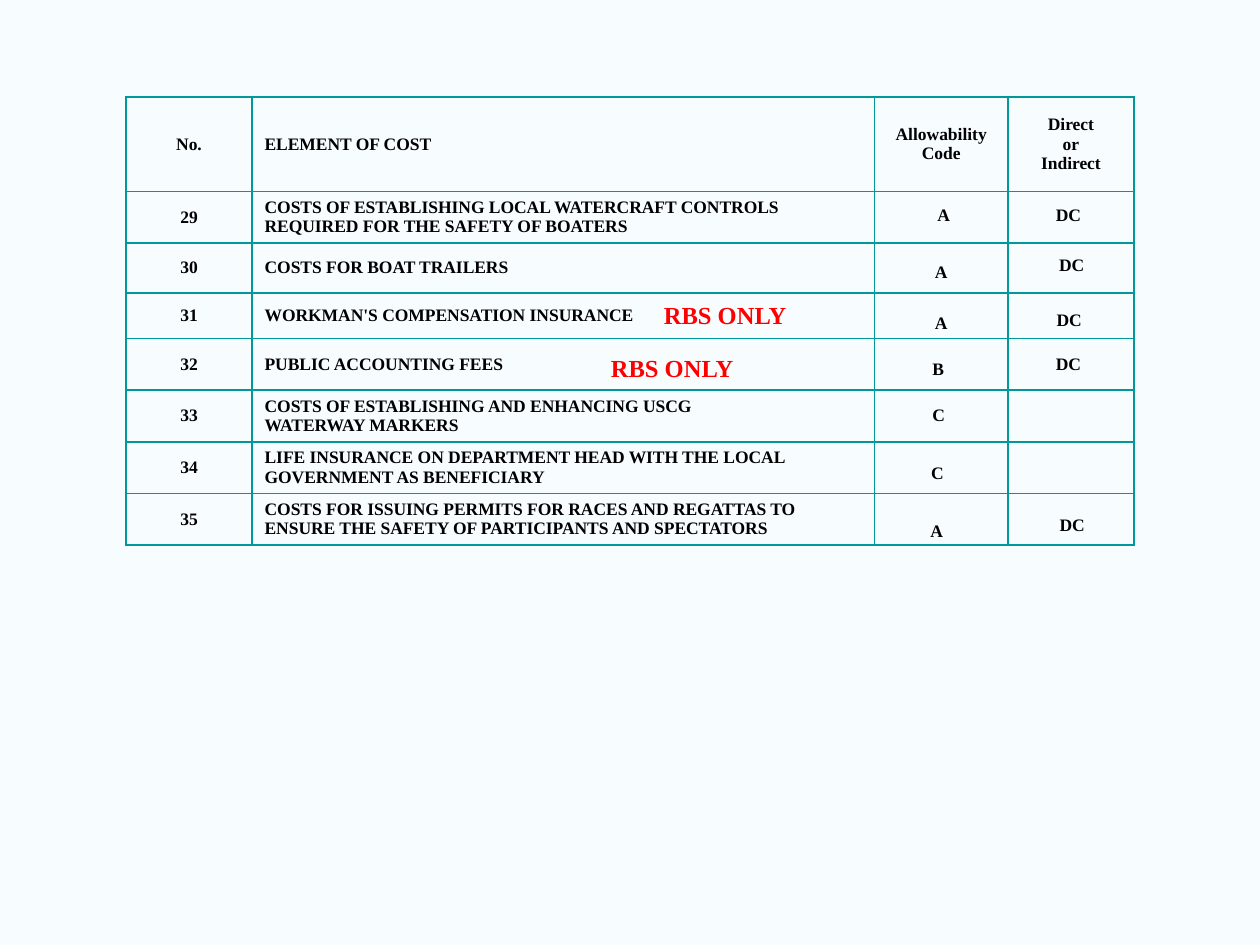
from typing import NamedTuple

from lxml.etree import SubElement
from pptx import Presentation
from pptx.dml.color import RGBColor
from pptx.enum.text import MSO_ANCHOR as ANCHOR, MSO_AUTO_SIZE as AUTO, PP_ALIGN as ALIGN
from pptx.oxml.ns import qn
from pptx.util import Inches, Pt

FONT = "Times New Roman"
TEAL, BLACK, RED, PALE = "009999", "010000", "FF0000", "F7FCFF"


class Label(NamedTuple):
    text: str
    left: float
    top: float
    width: float
    height: float = 0.27
    size: float = 10
    color: str = BLACK
    align: ALIGN = ALIGN.CENTER


COLUMNS = [1, 4.94, 1.06, 1]
HEIGHTS = [0.75, 0.4, 0.4, 0.36, 0.41, 0.41, 0.41, 0.41]
ROWS = [
    ("No.", "ELEMENT OF COST", "Allowability\nCode", "Direct\nor\nIndirect"),
    ("29", "COSTS OF ESTABLISHING LOCAL WATERCRAFT CONTROLS\nREQUIRED FOR THE SAFETY OF BOATERS"),
    ("30", "COSTS FOR BOAT TRAILERS"),
    ("31", "WORKMAN'S COMPENSATION INSURANCE"),
    ("32", "PUBLIC ACCOUNTING FEES"),
    ("33", "COSTS OF ESTABLISHING AND ENHANCING USCG\nWATERWAY MARKERS"),
    ("34", "LIFE INSURANCE ON DEPARTMENT HEAD WITH THE LOCAL\nGOVERNMENT AS BENEFICIARY"),
    ("35", "COSTS FOR ISSUING PERMITS FOR RACES AND REGATTAS TO\n"
           "ENSURE THE SAFETY OF PARTICIPANTS AND SPECTATORS"),
]
LABELS = [
    Label("A", 7.03, 1.57, 0.92),
    Label("DC", 8.03, 1.57, 0.9),
    Label("A", 7.02, 2.02, 0.9),
    Label("DC", 8.13, 1.97, 0.75),
    Label("A", 7, 2.43, 0.94),
    Label("DC", 8.05, 2.4, 0.87),
    Label("B", 7, 2.79, 0.89),
    Label("DC", 8.06, 2.75, 0.84),
    Label("C", 7.01, 3.16, 0.88),
    Label("C", 6.99, 3.62, 0.9),
    Label("A", 7.02, 4.08, 0.83),
    Label("DC", 8.08, 4.03, 0.86),
    Label("RBS ONLY", 5.17, 2.33, 1.42, 0.33, 14, RED, ALIGN.LEFT),
    Label("RBS ONLY", 4.75, 2.75, 1.42, 0.33, 14, RED, ALIGN.LEFT),
]


def rgb(value: str) -> RGBColor:
    return RGBColor.from_string(value)


def write(tf, text: str, *, size: float = 10, color: str = "000000",
          align: ALIGN = ALIGN.LEFT, hang: float = 0) -> None:
    for i, line in enumerate(text.split("\n")):
        p = tf.add_paragraph() if i else tf.paragraphs[0]
        p.alignment = align
        if hang:
            pPr = p._p.get_or_add_pPr()
            pPr.set("marL", str(Inches(hang)))
            pPr.set("indent", str(-Inches(hang)))
        if not line:
            SubElement(p._p, qn("a:endParaRPr")).set("sz", str(size * 100))
            continue
        r = p.add_run()
        r.text = line
        r.font.name, r.font.size, r.font.bold = FONT, Pt(size), True
        r.font.color.rgb = rgb(color)


def draw_borders(cell, color: str, width: float) -> None:
    tcPr = cell._tc.get_or_add_tcPr()
    for i, side in enumerate(("lnL", "lnR", "lnT", "lnB")):
        ln = tcPr.makeelement(qn(f"a:{side}"), {"w": str(Pt(width))})
        fill = SubElement(ln, qn("a:solidFill"))
        SubElement(fill, qn("a:srgbClr")).set("val", color)
        tcPr.insert(i, ln)


def draw_table(s) -> None:
    frame = s.shapes.add_table(len(ROWS), len(COLUMNS), Inches(1), Inches(0.77),
                               Inches(sum(COLUMNS)), Inches(sum(HEIGHTS)))
    table = frame.table
    table.first_row = table.horz_banding = False
    for column, width in zip(table.columns, COLUMNS):
        column.width = Inches(width)
    for i, (height, texts) in enumerate(zip(HEIGHTS, ROWS)):
        table.rows[i].height = Inches(height)
        for j in range(len(COLUMNS)):
            cell = table.cell(i, j)
            cell.fill.background()
            cell.vertical_anchor = ANCHOR.MIDDLE
            draw_borders(cell, TEAL, 1)
            write(cell.text_frame, texts[j] if j < len(texts) else "",
                  align=ALIGN.LEFT if j == 1 else ALIGN.CENTER, hang=0.38)


def draw_label(s, label: Label) -> None:
    sp = s.shapes.add_textbox(Inches(label.left), Inches(label.top),
                              Inches(label.width), Inches(label.height))
    tf = sp.text_frame
    tf.word_wrap = True
    tf.auto_size = AUTO.SHAPE_TO_FIT_TEXT
    write(tf, label.text, size=label.size, color=label.color, align=label.align)


def main() -> None:
    prs = Presentation()
    prs.slide_width, prs.slide_height = Inches(10), Inches(7.5)
    s = prs.slides.add_slide(prs.slide_layouts[6])
    s.background.fill.solid()
    s.background.fill.fore_color.rgb = rgb(PALE)
    draw_table(s)
    for label in LABELS:
        draw_label(s, label)
    prs.save("out.pptx")


if __name__ == "__main__":
    main()
